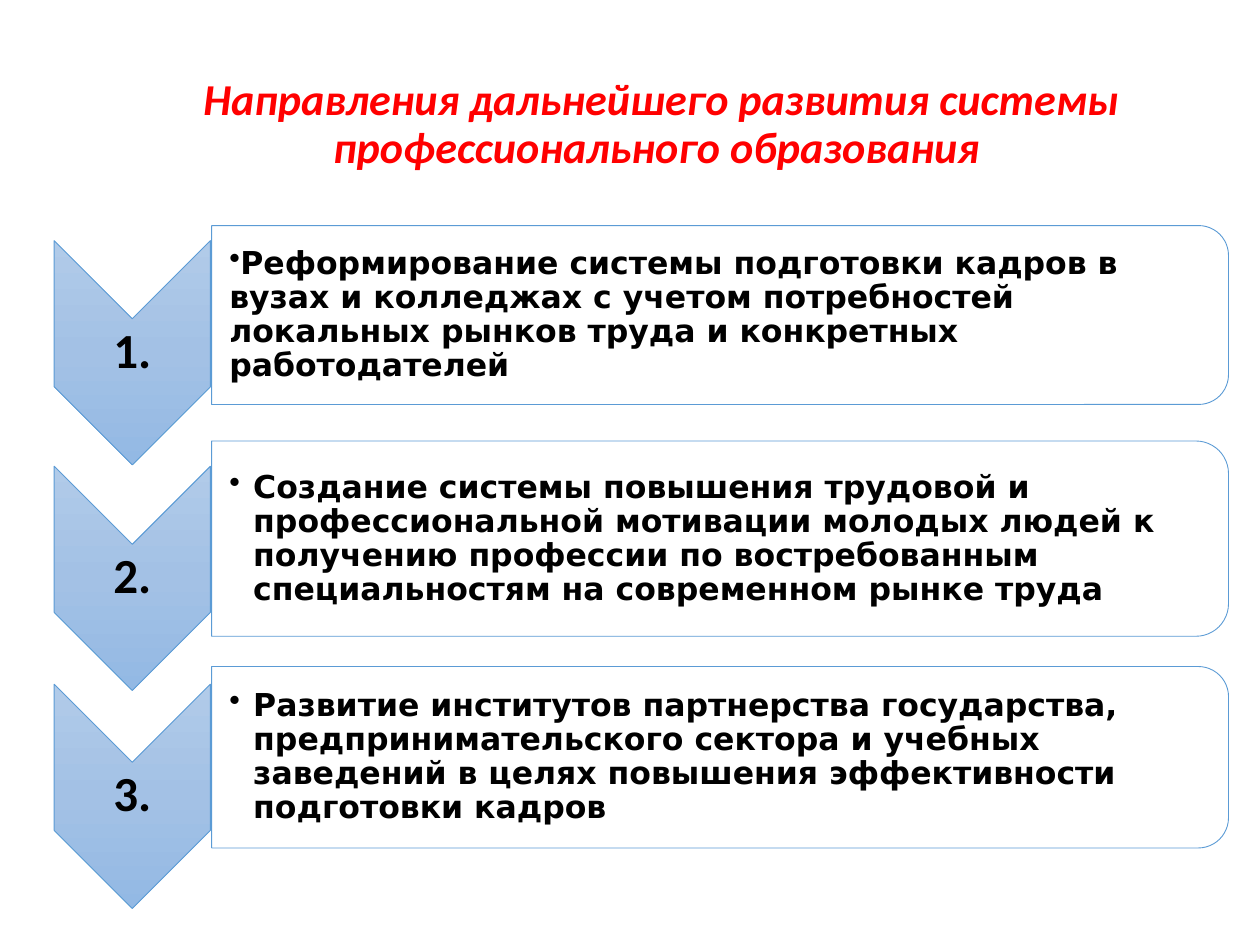
from dataclasses import dataclass

from lxml.etree import SubElement
from pptx import Presentation
from pptx.dml.color import RGBColor
from pptx.enum.shapes import MSO_SHAPE
from pptx.enum.text import MSO_ANCHOR, PP_ALIGN
from pptx.oxml.ns import qn
from pptx.util import Inches, Pt

COLORS = {"title": "FF0000", "text": "000000", "line": "5B9BD5", "panel": "FFFFFF"}
GRADIENT = {0: "B1CBE9", 50: "A3C1E5", 100: "93B9E4"}
FORMATS = {
    "title": {"name": "Calibri", "size": Pt(25.2), "bold": True, "italic": True},
    "number": {"name": "Calibri", "size": Pt(28), "bold": True},
    "body": {"name": "DejaVu Sans", "size": Pt(18), "bold": True},
}
BULLET_INDENT = 0.19


@dataclass
class Direction:
    """One numbered row; lengths are in inches."""
    number: str
    text: str
    chevron_top: float
    panel_top: float
    panel_height: float
    text_top: float
    text_height: float
    margin: float = BULLET_INDENT
    space_after: float = 2.7


DIRECTIONS = [
    Direction("1.", "Реформирование системы подготовки кадров в вузах и колледжах с учетом "
              "потребностей локальных рынков труда и конкретных работодателей",
              1.91, 1.79, 1.42, 1.86, 1.28, margin=0, space_after=0),
    Direction("2.", "Создание системы повышения трудовой и профессиональной мотивации молодых "
              "людей к получению профессии по востребованным специальностям на современном "
              "рынке труда", 3.7, 3.5, 1.55, 3.58, 1.4),
    Direction("3.", "Развитие институтов партнерства государства, предпринимательского сектора "
              "и учебных заведений в целях повышения эффективности подготовки кадров",
              5.43, 5.29, 1.44, 5.36, 1.3),
]


def add_rotated(slide, kind: MSO_SHAPE, left: float, top: float, width: float, height: float):
    """Add a shape turned by 90 degrees that covers the given box."""
    sp = slide.shapes.add_shape(
        kind, Inches(left + (width - height) / 2), Inches(top + (height - width) / 2),
        Inches(height), Inches(width))
    sp.rotation = 90
    sp.shadow.inherit = False
    sp.line.color.rgb = RGBColor.from_string(COLORS["line"])
    sp.line.width = Pt(0.5)
    return sp


def fill_gradient(sp) -> None:
    """Fill from top to bottom of the slide, whatever the rotation."""
    sp.fill.gradient()
    grad = sp._element.spPr.find(qn("a:gradFill"))
    grad.set("rotWithShape", "0")
    for child in list(grad):
        grad.remove(child)
    stops = SubElement(grad, qn("a:gsLst"))
    for pos, color in GRADIENT.items():
        stop = SubElement(stops, qn("a:gs"), pos=str(pos * 1000))
        SubElement(stop, qn("a:srgbClr"), val=color)
    SubElement(grad, qn("a:lin"), ang="5400000", scaled="0")


def fill_panel(sp) -> None:
    sp.fill.solid()
    sp.fill.fore_color.rgb = RGBColor.from_string(COLORS["panel"])
    color = sp._element.spPr.find(qn("a:solidFill"))[0]
    SubElement(color, qn("a:alpha"), val="90000")


def add_text(slide, text: str, box: tuple, style: str, color: str = "text",
             align: PP_ALIGN = PP_ALIGN.CENTER, insets: tuple = (0.02,) * 4):
    """Add a one-paragraph text box and return the paragraph."""
    tf = slide.shapes.add_textbox(*map(Inches, box)).text_frame
    sides = ("margin_left", "margin_top", "margin_right", "margin_bottom")
    frame = {"word_wrap": True, "vertical_anchor": MSO_ANCHOR.MIDDLE,
             **dict(zip(sides, map(Inches, insets)))}
    for key, value in frame.items():
        setattr(tf, key, value)
    p = tf.paragraphs[0]
    p.alignment = align
    p.line_spacing = 0.9
    r = p.add_run()
    r.text = text
    for key, value in FORMATS[style].items():
        setattr(r.font, key, value)
    r.font.color.rgb = RGBColor.from_string(COLORS[color])
    return p


def add_bullet(p, margin: float) -> None:
    pPr = p._p.get_or_add_pPr()
    pPr.set("marL", str(Inches(margin)))
    pPr.set("indent", str(Inches(-BULLET_INDENT)))
    SubElement(pPr, qn("a:buChar"), char="•")


def add_direction(slide, d: Direction) -> None:
    # Numbered chevron
    fill_gradient(add_rotated(slide, MSO_SHAPE.CHEVRON, 0.43, d.chevron_top, 1.24, 1.78))
    add_text(slide, d.number, (0.43, d.chevron_top + 0.62, 1.24, 0.53), "number")
    # Panel with the bulleted text
    fill_panel(add_rotated(slide, MSO_SHAPE.ROUND_2_SAME_RECTANGLE,
                           1.68, d.panel_top, 8.07, d.panel_height))
    p = add_text(slide, d.text, (1.68, d.text_top, 8, d.text_height), "body",
                 align=PP_ALIGN.LEFT, insets=(0.14, 0.01, 0.01, 0.01))
    p.space_after = Pt(d.space_after)
    add_bullet(p, d.margin)


def main() -> None:
    prs = Presentation()
    prs.slide_width, prs.slide_height = Inches(10), Inches(7.5)
    slide = prs.slides.add_slide(prs.slide_layouts[6])
    # Title
    add_text(slide, "Направления дальнейшего развития системы профессионального образования ",
             (0.75, 0.68, 9, 0.63), "title", "title", insets=(0.1, 0.05, 0.1, 0.05))
    # Rows
    for direction in DIRECTIONS:
        add_direction(slide, direction)
    prs.save("out.pptx")


if __name__ == "__main__":
    main()
